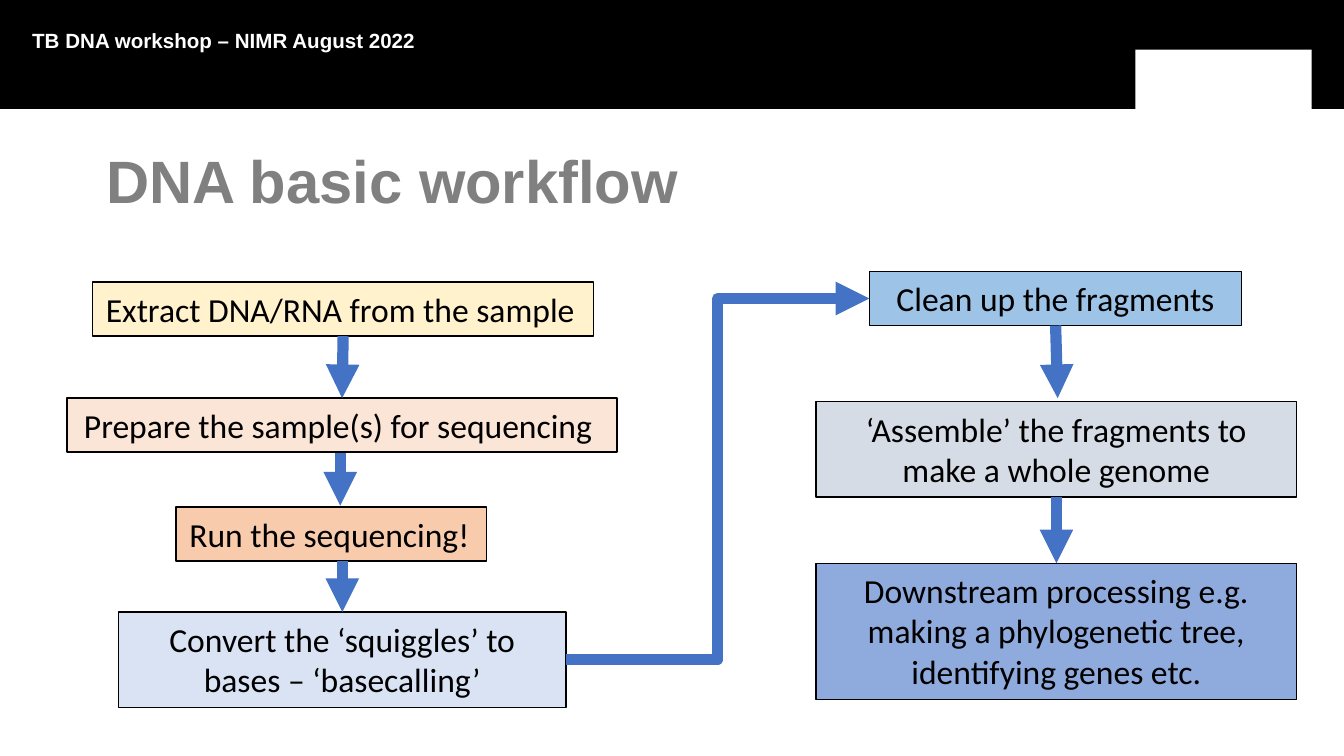
from lxml import etree
from pptx import Presentation
from pptx.dml.color import RGBColor
from pptx.enum.shapes import MSO_CONNECTOR, MSO_SHAPE
from pptx.enum.text import MSO_ANCHOR, MSO_AUTO_SIZE, PP_ALIGN
from pptx.oxml.ns import qn
from pptx.util import Cm, Pt

RECTANGLE = MSO_SHAPE.RECTANGLE
STRAIGHT, ELBOW = MSO_CONNECTOR.STRAIGHT, MSO_CONNECTOR.ELBOW
LEFT, CENTER = PP_ALIGN.LEFT, PP_ALIGN.CENTER
TOP, MIDDLE = MSO_ANCHOR.TOP, MSO_ANCHOR.MIDDLE
GROW, FIXED = MSO_AUTO_SIZE.SHAPE_TO_FIT_TEXT, MSO_AUTO_SIZE.NONE
TOP_SIDE, LEFT_SIDE, BOTTOM_SIDE, RIGHT_SIDE = range(4)

STEP_FONT = {"name": "Calibri", "size": Pt(18)}
TITLE_FONT = {"name": "Arial", "size": Pt(32), "bold": True}
HEADER_FONT = {"name": "Arial", "size": Pt(11), "bold": True}

# name: left, top, width, height, fill, alignment, wrap, text
STEPS = {
    "extract": (1.75, 5.33, 9.47, 1.02, "FFF2CC", LEFT, False,
                "Extract DNA/RNA from the sample"),
    "prepare": (1.27, 7.52, 10.39, 1.02, "FBE5D6", CENTER, False,
                "Prepare the sample(s) for sequencing "),
    "run": (3.33, 9.58, 5.87, 1.02, "F8CBAD", LEFT, False,
            "Run the sequencing!"),
    "convert": (2.24, 11.56, 8.46, 1.8, "DAE3F3", CENTER, True,
                "Convert the ‘squiggles’ to bases – ‘basecalling’"),
    "clean": (16.43, 5.13, 7.04, 1.02, "9DC3E6", CENTER, True,
              "Clean up the fragments"),
    "assemble": (15.42, 7.59, 9.09, 1.8, "D6DCE5", CENTER, True,
                 "‘Assemble’ the fragments to make a whole genome"),
    "downstream": (15.42, 10.64, 9.09, 2.57, "8FAADC", CENTER, True,
                   "Downstream processing e.g. making a phylogenetic tree, "
                   "identifying genes etc."),
}


def color(value):
    return RGBColor.from_string(value)


def set_all(target, values):
    for name, value in values.items():
        setattr(target, name, value)


def place(shape, left, top, width, height):
    set_all(shape, {"left": Cm(left), "top": Cm(top),
                    "width": Cm(width), "height": Cm(height)})


def write(shape, text, font, text_color, frame, paragraph):
    set_all(shape.text_frame, frame)
    para = shape.text_frame.paragraphs[0]
    set_all(para, paragraph)
    span = para.add_run()
    span.text = text
    set_all(span.font, font)
    span.font.color.rgb = color(text_color)


def add_rectangle(page, bounds, fill, outline=None):
    box = page.shapes.add_shape(RECTANGLE, *map(Cm, bounds))
    box.shadow.inherit = False
    box.fill.solid()
    box.fill.fore_color.rgb = color(fill)
    if outline:
        box.line.color.rgb = color(outline)
        box.line.width = Pt(0.75)
    else:
        box.line.fill.background()
    return box


def add_step(page, left, top, width, height, fill, alignment, wrap, text):
    box = add_rectangle(page, (left, top, width, height), fill, "000000")
    write(box, text, STEP_FONT, "000000",
          {"word_wrap": wrap, "auto_size": GROW, "vertical_anchor": TOP},
          {"alignment": alignment})
    return box


def add_arrow(page, start=(0, 0), end=(0, 0), source=None, target=None,
              kind=STRAIGHT):
    """Draw between two points, or from and to (box, side) pairs."""
    arrow = page.shapes.add_connector(kind, *map(Cm, start + end))
    if source:
        arrow.begin_connect(*source)
    if target:
        arrow.end_connect(*target)
    arrow.line.color.rgb = color("4472C4")
    arrow.line.width = Pt(6)
    outline = arrow.line._get_or_add_ln()
    etree.SubElement(outline, qn("a:tailEnd"), type="triangle")
    etree.SubElement(arrow._element.spPr, qn("a:effectLst"))


def add_heading(page):
    # Banner with a plain block in its corner
    add_rectangle(page, (0, 0, 25.4, 2.06), "000000")
    add_rectangle(page, (21.46, 0.94, 3.33, 1.12), "FFFFFF")

    # Title and event line
    title = page.shapes.title
    place(title, 1.75, 2.8, 22.35, 1.42)
    write(title, "DNA basic workflow", TITLE_FONT, "808080",
          {"word_wrap": True, "auto_size": FIXED, "vertical_anchor": MIDDLE},
          {"alignment": LEFT, "line_spacing": 0.8})
    event = page.shapes.add_textbox(Cm(0.61), Cm(0.61), Cm(15.24), Cm(0.81))
    margins = {f"margin_{side}": 0 for side in ("left", "top", "right", "bottom")}
    write(event, "TB DNA workshop – NIMR August 2022", HEADER_FONT, "FFFFFF",
          {"word_wrap": True, "vertical_anchor": TOP, **margins},
          {"alignment": LEFT, "line_spacing": 0.8})


def add_workflow(page):
    boxes = {name: add_step(page, *step) for name, step in STEPS.items()}

    # Left column
    add_arrow(page, source=(boxes["extract"], BOTTOM_SIDE),
              target=(boxes["prepare"], TOP_SIDE))
    add_arrow(page, start=(6.43, 8.55), end=(6.43, 9.55))
    add_arrow(page, start=(6.47, 10.6),
              target=(boxes["convert"], TOP_SIDE))

    # Right column
    add_arrow(page, end=(19.99, 7.52),
              source=(boxes["clean"], BOTTOM_SIDE))
    add_arrow(page, source=(boxes["assemble"], BOTTOM_SIDE),
              target=(boxes["downstream"], TOP_SIDE))

    # From the left column to the right one
    add_arrow(page, source=(boxes["convert"], RIGHT_SIDE),
              target=(boxes["clean"], LEFT_SIDE), kind=ELBOW)


def main():
    deck = Presentation()
    deck.slide_width, deck.slide_height = Cm(25.4), Cm(14.28)
    page = deck.slides.add_slide(deck.slide_layouts[5])
    add_heading(page)
    add_workflow(page)
    deck.save("out.pptx")


if __name__ == "__main__":
    main()
